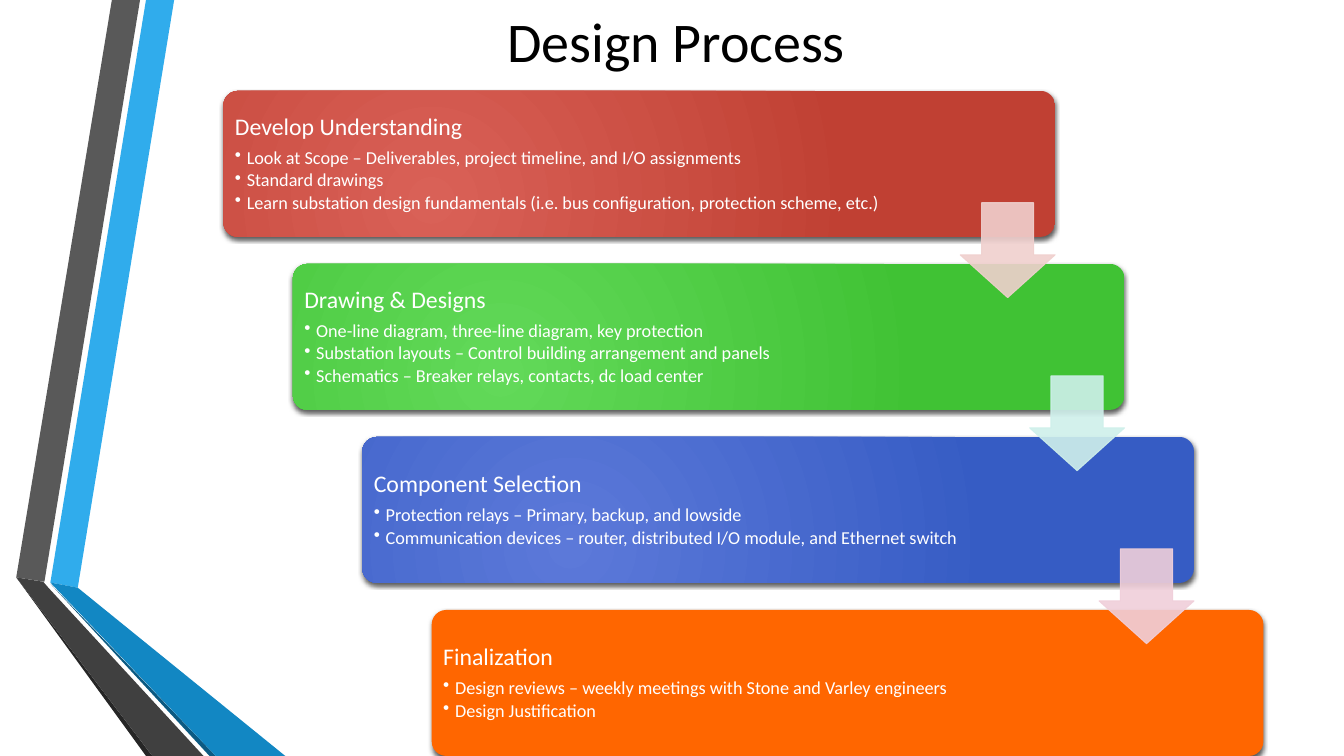
from lxml.etree import SubElement
from pptx import Presentation
from pptx.dml.color import RGBColor as Rgb
from pptx.enum.shapes import MSO_SHAPE as Preset
from pptx.enum.text import MSO_ANCHOR as Anchor, PP_ALIGN as Align
from pptx.oxml.ns import qn
from pptx.util import Cm, Pt

COLORS = {
    "ink": "000000", "paper": "FFFFFF",
    "sky": "30ACEC", "blue": "1287C3", "navy": "0C5A82",
    "gray": "595959", "charcoal": "404040", "black": "262626",
    "red light": "D96157", "red": "C04033",
    "green light": "62D959", "green": "40C234",
    "indigo light": "5C79D9", "indigo": "365CC4",
    "orange": "FF6600",
    "rose": "F0D0CE", "mint": "CFF0EB", "pink": "F0CFDA",
}

# Ribbon facets, as corner points in cm
RIBBON = [
    ("sky", [(1.27, 14.68), (1.96, 14.81), (4.39, 0), (3.68, 0)]),
    ("gray", [(3.53, 0), (2.82, 0), (0.41, 14.55), (1.12, 14.66)]),
    ("black", [(0.41, 14.55), (3.68, 19.05), (3.84, 19.05)]),
    ("navy", [(1.27, 14.71), (5.28, 19.05), (5.44, 19.05)]),
    ("blue", [(1.27, 14.68), (5.44, 19.05), (7.19, 19.05), (1.96, 14.81)]),
    ("charcoal", [(5.13, 19.05), (1.22, 14.81), (1.09, 14.66), (0.41, 14.55),
                  (3.84, 19.05)]),
]

# Heading, card colours (two make a gradient), points
STAGES = [
    ("Develop Understanding", ["red light", "red"], [
        "Look at Scope – Deliverables, project timeline, and I/O assignments",
        "Standard drawings",
        "Learn substation design fundamentals (i.e. bus configuration, "
        "protection scheme, etc.)"]),
    ("Drawing & Designs", ["green light", "green"], [
        "One-line diagram, three-line diagram, key protection",
        "Substation layouts – Control building arrangement and panels",
        "Schematics – Breaker relays, contacts, dc load center"]),
    ("Component Selection", ["indigo light", "indigo"], [
        "Protection relays – Primary, backup, and lowside",
        "Communication devices – router, distributed I/O module, "
        "and Ethernet switch"]),
    ("Finalization", ["orange"], [
        "Design reviews – weekly meetings with Stone and Varley engineers",
        "Design Justification"]),
]
ARROWS = ["rose", "mint", "pink"]

# Staircase of cards, in cm
LEFT, TOP = 5.63, 2.29
STEP_X, STEP_Y = 1.75, 4.36
CARD_W, CARD_H = 20.96, 3.68
ARROW_DX, ARROW_DY, ARROW_SIZE = 18.57, 2.82, 2.39
INSET = 0.11


def rgb(name):
    return Rgb.from_string(COLORS[name])


def write(paragraph, text, size, color="paper", align=Align.LEFT,
          spacing=0.9, after=0, bullet=False):
    run = paragraph.add_run()
    run.text = text
    run.font.name = "Calibri"
    run.font.size = Pt(size)
    run.font.color.rgb = rgb(color)
    paragraph.alignment = align
    paragraph.line_spacing = spacing
    paragraph.space_after = Pt(after)
    if bullet:
        paragraph.level = 1
        props = paragraph._p.get_or_add_pPr()
        props.set("marL", str(Cm(0.3)))
        props.set("indent", str(-Cm(0.3)))
        SubElement(props, qn("a:buChar"), char="•")


class ProcessSlide:
    def __init__(self, slide):
        self.slide = slide
        self.shapes = slide.shapes

    def title(self, text):
        title = self.shapes.title
        title.left, title.top = Cm(3.12), Cm(-1.42)
        title.width, title.height = Cm(27.84), Cm(4.88)
        title.text_frame.vertical_anchor = Anchor.MIDDLE
        write(title.text_frame.paragraphs[0], text, 40, color="ink",
              align=Align.CENTER, spacing=1.0)

    def facet(self, color, corners):
        start, *others = [(Cm(x), Cm(y)) for x, y in corners]
        outline = self.shapes.build_freeform(*start)
        outline.add_line_segments(others, close=True)
        facet = outline.convert_to_shape()
        facet.fill.solid()
        facet.fill.fore_color.rgb = rgb(color)
        facet.line.fill.background()
        facet.shadow.inherit = False

    def card(self, x, y, colors):
        card = self.shapes.add_shape(Preset.ROUNDED_RECTANGLE, Cm(x), Cm(y),
                                     Cm(CARD_W), Cm(CARD_H))
        card.adjustments[0] = 0.1
        if len(colors) == 1:
            card.fill.solid()
            card.fill.fore_color.rgb = rgb(colors[0])
        else:
            self.radial_fill(card, colors)
        card.line.fill.background()
        self.drop_shadow(card)

    def radial_fill(self, card, colors):
        card.fill.gradient()
        for stop, color in zip(card.fill.gradient_stops, colors):
            stop.color.rgb = rgb(color)
        gradient = card._element.spPr.find(qn("a:gradFill"))
        gradient.remove(gradient.find(qn("a:lin")))
        circle = SubElement(gradient, qn("a:path"), path="circle")
        SubElement(circle, qn("a:fillToRect"),
                   l="50000", t="100000", r="100000", b="50000")

    def drop_shadow(self, card):
        card.shadow.inherit = False
        effects = card._element.spPr.find(qn("a:effectLst"))
        shadow = SubElement(effects, qn("a:outerShdw"), blurRad=str(Pt(3)),
                            dist=str(Pt(2)), dir="5400000", rotWithShape="0")
        tone = SubElement(shadow, qn("a:srgbClr"), val=COLORS["ink"])
        SubElement(tone, qn("a:alpha"), val="64000")

    def stage_text(self, x, y, heading, points):
        box = self.shapes.add_textbox(Cm(x + INSET), Cm(y + INSET),
                                      Cm(16.6), Cm(CARD_H - 2 * INSET))
        frame = box.text_frame
        frame.word_wrap = True
        frame.vertical_anchor = Anchor.MIDDLE
        frame.margin_left = frame.margin_right = Cm(0.18)
        frame.margin_top = frame.margin_bottom = Cm(0.18)
        write(frame.paragraphs[0], heading, 17, after=6)
        for point in points:
            write(frame.add_paragraph(), point, 13, after=2, bullet=True)

    def arrow(self, x, y, color):
        arrow = self.shapes.add_shape(Preset.DOWN_ARROW, Cm(x), Cm(y),
                                      Cm(ARROW_SIZE), Cm(ARROW_SIZE))
        arrow.adjustments[0], arrow.adjustments[1] = 0.55, 0.45
        arrow.fill.solid()
        arrow.fill.fore_color.rgb = rgb(color)
        arrow.line.color.rgb = rgb(color)
        arrow.line.width = Pt(0.75)
        arrow.shadow.inherit = False
        for tone in arrow._element.spPr.iter(qn("a:srgbClr")):
            SubElement(tone, qn("a:alpha"), val="90000")


def main():
    deck = Presentation()
    deck.slide_width, deck.slide_height = Cm(33.87), Cm(19.05)
    process = ProcessSlide(deck.slides.add_slide(deck.slide_layouts[5]))

    # Ribbon on the left
    for color, corners in RIBBON:
        process.facet(color, corners)

    process.title("Design Process")

    # Stages going down the stairs
    corners = [(LEFT + i * STEP_X, TOP + i * STEP_Y) for i in range(len(STAGES))]
    for (x, y), (heading, colors, points) in zip(corners, STAGES):
        process.card(x, y, colors)
        process.stage_text(x, y, heading, points)

    # Arrows from each stage to the next
    for (x, y), color in zip(corners, ARROWS):
        process.arrow(x + ARROW_DX, y + ARROW_DY, color)

    deck.save("out.pptx")


if __name__ == "__main__":
    main()
